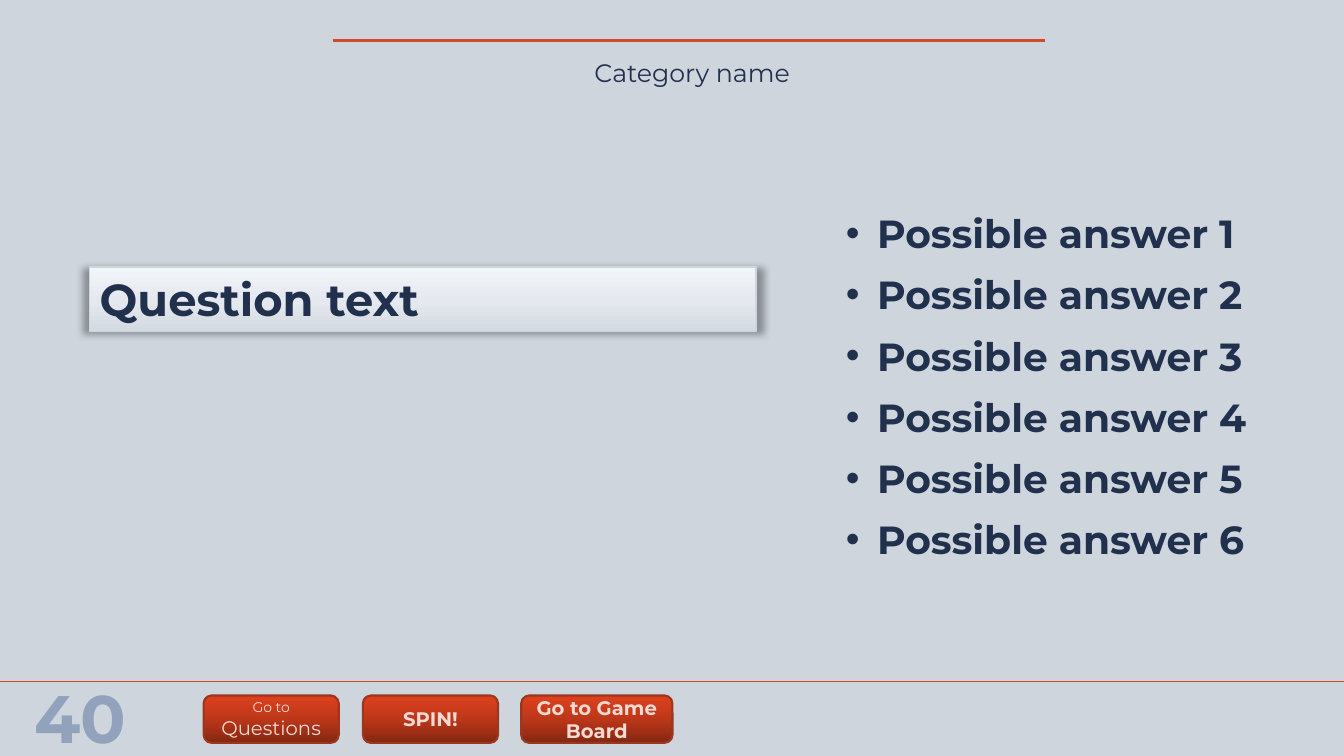
import copy

import lxml.etree
import pptx
import pptx.dml.color
import pptx.enum.dml
import pptx.enum.shapes
import pptx.enum.text
import pptx.oxml
import pptx.oxml.ns
import pptx.util

PX = 9144
FONT = "Montserrat"
INK = {
    "back": "CED5DD", "rule": "D2492A", "score": "92A2BD", "navy": "21314D",
    "edge": "9B361F", "label": "F6DAD4", "black": "000000",
}
FADE = {
    "red": [(0, "842711"), (0.5, "BC3719"), (1, "DF411D")],
    "pale": [(0, "D4DAE1"), (0.48, "E5E9EF"), (1, "F2F6FA")],
}
ALIGN = pptx.enum.text.PP_ALIGN
SHAPE = pptx.enum.shapes.MSO_SHAPE
QN = pptx.oxml.ns.qn


def emu(*sizes):
    """Turn px lengths into EMU."""
    return [size * PX for size in sizes]


def rgb(code):
    """Give the colour for a hex string."""
    return pptx.dml.color.RGBColor.from_string(code)


def bullet(para):
    """Give a paragraph a hanging round bullet."""
    props = para._p.get_or_add_pPr()
    props.set("marL", str(31 * PX))
    props.set("indent", str(-31 * PX))
    lxml.etree.SubElement(props, QN("a:buFont")).set("typeface", "Arial")
    lxml.etree.SubElement(props, QN("a:buChar")).set("char", "•")


def write(shape, lines, size=14, color="navy", bold=False, align=ALIGN.LEFT,
          middle=False, dots=False, lead=None, grow=True):
    """Fill a shape with paragraphs; a list in lines holds broken (text, size) rows."""
    frame = shape.text_frame
    frame.word_wrap = True
    anchor = pptx.enum.text.MSO_ANCHOR
    frame.vertical_anchor = anchor.MIDDLE if middle else anchor.TOP
    fit = pptx.enum.text.MSO_AUTO_SIZE
    frame.auto_size = fit.SHAPE_TO_FIT_TEXT if grow else fit.NONE
    for spot, line in enumerate(lines):
        para = frame.paragraphs[0] if spot == 0 else frame.add_paragraph()
        para.alignment = align
        if lead:
            para.line_spacing = lead
        if dots:
            bullet(para)
        rows = line if isinstance(line, list) else [(line, size)]
        for row, (words, points) in enumerate(rows):
            if row:
                para.add_line_break()
            run = para.add_run()
            run.text = words
            run.font.name = FONT
            run.font.size = pptx.util.Pt(points)
            run.font.bold = bold
            run.font.color.rgb = rgb(INK[color])


def label(slide, box, lines, **style):
    """Add a text box."""
    write(slide.shapes.add_textbox(*emu(*box)), lines, **style)


def rule(slide, start, end, width):
    """Add a straight red line."""
    line = slide.shapes.add_connector(
        pptx.enum.shapes.MSO_CONNECTOR.STRAIGHT, *emu(*start, *end))
    line.line.color.rgb = rgb(INK["rule"])
    line.line.width = pptx.util.Pt(width)
    lxml.etree.SubElement(line._element.spPr, QN("a:effectLst"))


def panel(slide, kind, box, fade, edge, width):
    """Add a shape with an upward gradient."""
    shape = slide.shapes.add_shape(kind, *emu(*box))
    shape.shadow.inherit = False
    shape.fill.gradient()
    shape.fill.gradient_angle = 90
    stops = shape._element.spPr.find(".//" + QN("a:gsLst"))
    stops.append(copy.deepcopy(stops[0]))
    for stop, (place, code) in zip(shape.fill.gradient_stops, FADE[fade]):
        stop.position = place
        stop.color.rgb = rgb(code)
    shape.line.color.rgb = rgb(INK[edge])
    shape.line.width = pptx.util.Pt(width)
    return shape


def shade(shape):
    """Give a shape a soft dark shadow."""
    effect = shape._element.spPr.find(QN("a:effectLst"))
    cast = lxml.etree.SubElement(
        effect, QN("a:outerShdw"), blurRad="63500", dist="12700",
        dir="5400000", sx="102000", sy="101000", rotWithShape="0")
    tone = lxml.etree.SubElement(cast, QN("a:srgbClr"), val=INK["black"])
    lxml.etree.SubElement(tone, QN("a:alpha"), val="32000")


def button(slide, left, width, line, bold=True):
    """Add a red button to the bottom bar."""
    shape = panel(slide, SHAPE.ROUNDED_RECTANGLE, (left, 690, width, 47),
                  "red", "edge", 1.5)
    write(shape, [line], color="label", bold=bold, align=ALIGN.CENTER,
          middle=True, grow=False)


def main():
    """Build the question slide."""
    deck = pptx.Presentation()
    deck.slide_width, deck.slide_height = emu(1333, 750)
    slide = deck.slides.add_slide(deck.slide_layouts[6])
    slide.background.fill.solid()
    slide.background.fill.fore_color.rgb = rgb(INK["back"])

    rule(slide, (1333, 676), (0, 676), 1)
    rule(slide, (330, 40), (1036, 40), 2)
    label(slide, (21, 666, 118, 91), ["40"], size=48, color="score",
          bold=True, align=ALIGN.CENTER)
    label(slide, (336, 52, 701, 40), ["Category name"], size=18,
          align=ALIGN.CENTER)

    query = panel(slide, SHAPE.RECTANGLE, (89, 265, 661, 64), "pale", "back", 1)
    shade(query)
    write(query, ["Question text"], size=32, bold=True)
    label(slide, (829, 189, 428, 372),
          [f"Possible answer {count}" for count in range(1, 7)],
          size=28, bold=True, dots=True, lead=1.3)

    button(slide, 202, 134, [("Go to", 10), ("Questions", 14)], bold=False)
    button(slide, 360, 134, "SPIN!")
    button(slide, 517, 150, "Go to Game Board")
    deck.save("out.pptx")


if __name__ == "__main__":
    main()
